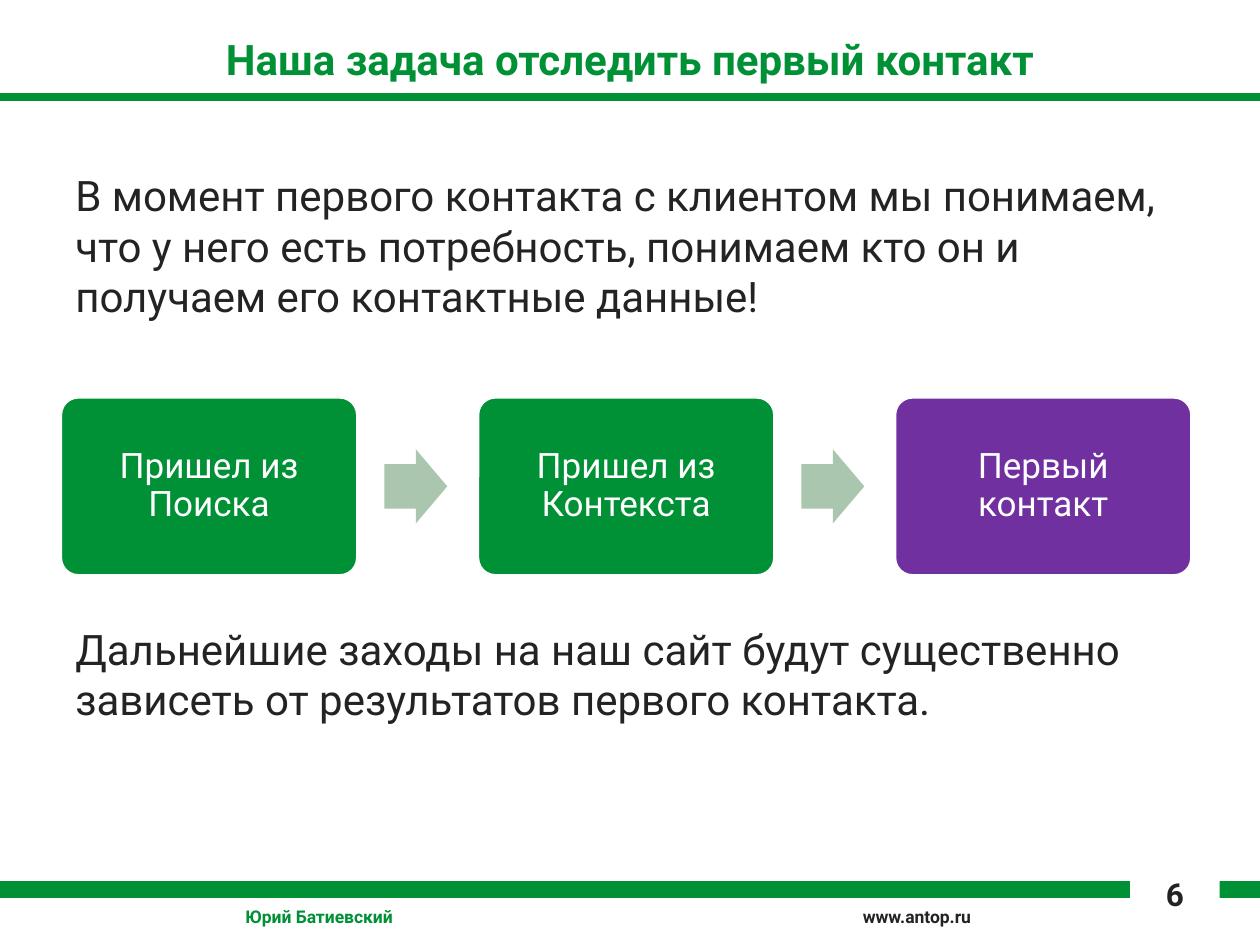
from lxml.etree import SubElement
from pptx import Presentation
from pptx.dml.color import RGBColor
from pptx.enum.shapes import MSO_CONNECTOR, MSO_SHAPE
from pptx.enum.text import MSO_ANCHOR, PP_ALIGN
from pptx.oxml.ns import qn
from pptx.util import Inches, Pt

FONT = "Roboto"
GREEN, PURPLE, PALE = "009036", "7030A0", "ABC6AE"
DARK, WHITE = "232323", "FFFFFF"

RULES = [(0.77, 5), (7.06, 10)]  # y, width in points
# text, (left, top, width, height), size, colour, bold, alignment, anchor
TEXTS = [
    ("Наша задача отследить первый контакт", (0.51, 0.21, 8.98, 0.51),
     24, GREEN, True, PP_ALIGN.CENTER, MSO_ANCHOR.MIDDLE),
    ("В момент первого контакта с клиентом мы понимаем, что у него есть "
     "потребность, понимаем кто он и получаем его контактные данные!",
     (0.5, 1.3, 9, 1.4), 24, DARK, False, PP_ALIGN.LEFT, MSO_ANCHOR.TOP),
    ("Дальнейшие заходы на наш сайт будут существенно зависеть от "
     "результатов первого контакта.",
     (0.5, 4.9, 9, 1), 24, DARK, False, PP_ALIGN.LEFT, MSO_ANCHOR.TOP),
    ("Юрий Батиевский", (1.85, 7.14, 5.83, 0.24),
     10, GREEN, True, PP_ALIGN.LEFT, MSO_ANCHOR.TOP),
    ("www.antop.ru", (6.75, 7.14, 2.43, 0.27),
     10, DARK, True, PP_ALIGN.LEFT, MSO_ANCHOR.TOP),
]
PAGE_NUMBER = "6"
STEPS = [("Пришел из Поиска", GREEN), ("Пришел из Контекста", GREEN),
         ("Первый контакт", PURPLE)]
STEP_LEFT, STEP_TOP, STEP_W, STEP_H = 0.48, 3.15, 2.36, 1.42
STEP_PITCH = 3.31
ARROW_W, ARROW_H, ARROW_GAP = 0.5, 0.59, 0.21


def rgb(value):
    return RGBColor.from_string(value)


def write(sp, text, size, color, bold, align, anchor, spacing=None):
    tf = sp.text_frame
    tf.word_wrap = True
    tf.vertical_anchor = anchor
    p = tf.paragraphs[0]
    p.alignment = align
    if spacing:
        p.line_spacing = spacing
    r = p.add_run()
    r.text = text
    r.font.name, r.font.size, r.font.bold = FONT, Pt(size), bold
    r.font.color.rgb = rgb(color)


def add_shape(s, kind, box, fill, line=None):
    sp = s.shapes.add_shape(kind, *map(Inches, box))
    sp.shadow.inherit = False
    sp.fill.solid()
    sp.fill.fore_color.rgb = rgb(fill)
    if line:
        sp.line.color.rgb = rgb(line)
        sp.line.width = Pt(2)
    else:
        sp.line.fill.background()
    return sp


def add_rule(s, y, width):
    """Draw a green line across the whole slide."""
    c = s.shapes.add_connector(MSO_CONNECTOR.STRAIGHT, 0, Inches(y),
                               Inches(10), Inches(y))
    c.line.color.rgb = rgb(GREEN)
    c.line.width = Pt(width)
    SubElement(c._element.spPr, qn("a:effectLst"))


def add_steps(s):
    for i, (label, color) in enumerate(STEPS):
        left = STEP_LEFT + i * STEP_PITCH
        sp = add_shape(s, MSO_SHAPE.ROUNDED_RECTANGLE,
                       (left, STEP_TOP, STEP_W, STEP_H), color, WHITE)
        sp.adjustments[0] = 0.1
        write(sp, label, 20, WHITE, False, PP_ALIGN.CENTER,
              MSO_ANCHOR.MIDDLE, 0.9)
        if i < len(STEPS) - 1:
            arrow = add_shape(s, MSO_SHAPE.RIGHT_ARROW,
                              (left + STEP_W + ARROW_GAP,
                               STEP_TOP + (STEP_H - ARROW_H) / 2,
                               ARROW_W, ARROW_H), PALE)
            arrow.adjustments[0] = 0.6
            arrow.adjustments[1] = 0.5


def main():
    prs = Presentation()
    prs.slide_width, prs.slide_height = Inches(10), Inches(7.5)
    s = prs.slides.add_slide(prs.slide_layouts[6])
    for y, width in RULES:
        add_rule(s, y, width)
    for text, box, *style in TEXTS:
        write(s.shapes.add_textbox(*map(Inches, box)), text, *style)
    badge = add_shape(s, MSO_SHAPE.RECTANGLE, (8.97, 6.85, 0.71, 0.65), WHITE)
    write(badge, PAGE_NUMBER, 18, DARK, True, PP_ALIGN.CENTER,
          MSO_ANCHOR.TOP, 1.15)
    add_steps(s)
    prs.save("out.pptx")


if __name__ == "__main__":
    main()
